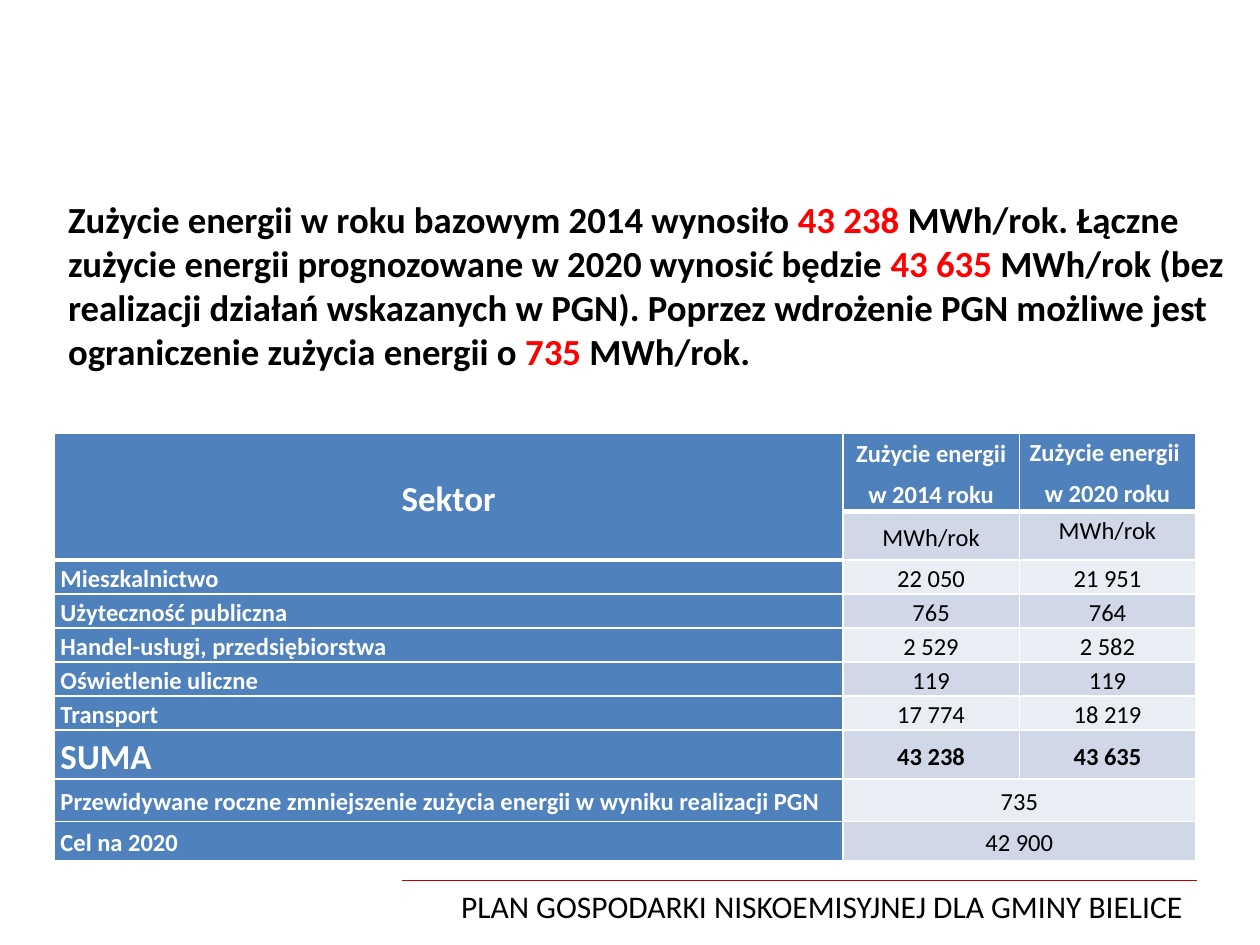
from lxml import etree
from pptx import Presentation
from pptx.dml.color import RGBColor
from pptx.enum import shapes, text
from pptx.oxml.ns import qn
from pptx.util import Inches, Pt

THEME = {
    "font": "Calibri",
    "black": "000000", "white": "FFFFFF", "accent": "FF0000", "rule": "C00000",
    "header": "4F81BD", "bands": ("D0D8E8", "E9EDF4"),
    "title": 21, "footer": 18, "large": 20, "body": 14,
}

TITLE = [
    ("Zużycie energii w roku bazowym 2014 wynosiło ", "black"),
    ("43 238 ", "accent"),
    ("MWh/rok. Łączne zużycie energii prognozowane w 2020 wynosić będzie ", "black"),
    ("43 635 ", "accent"),
    ("MWh/rok (bez realizacji działań wskazanych w PGN). Poprzez wdrożenie PGN "
     "możliwe jest ograniczenie zużycia energii o ", "black"),
    ("735 ", "accent"),
    ("MWh/rok.", "black"),
]
FOOTER = "PLAN GOSPODARKI NISKOEMISYJNEJ DLA GMINY BIELICE"

ROWS = [
    ("Sektor", "Zużycie energii\nw 2014 roku", "Zużycie energii \nw 2020 roku"),
    (None, "MWh/rok", "MWh/rok"),
    ("Mieszkalnictwo", "22 050", "21 951"),
    ("Użyteczność publiczna", "765", "764"),
    ("Handel-usługi, przedsiębiorstwa", "2 529", "2 582"),
    ("Oświetlenie uliczne", "119", "119"),
    ("Transport", "17 774", "18 219"),
    ("SUMA", "43 238", "43 635"),
    ("Przewidywane roczne zmniejszenie zużycia energii w wyniku realizacji PGN", "735", None),
    ("Cel na 2020", "42 900", None),
]
LARGE_LABELS = ("Sektor", "SUMA")
TOTAL_ROW = 7
COLUMN_WIDTHS = (6.26, 1.4, 1.4)
ROW_HEIGHTS = (0.62, 0.38, *[0.27] * 5, 0.39, 0.34, 0.31)
MERGES = [((0, 0), (1, 0)), ((8, 1), (8, 2)), ((9, 1), (9, 2))]
THICK_BOTTOM = {(0, 1), (0, 2), (1, 0)}


def rgb(name):
    return RGBColor.from_string(THEME.get(name, name))


def apply(target, **values):
    for name, value in values.items():
        setattr(target, name, value)


def add_span(para, words, size, color, bold=False):
    span = para.add_run()
    span.text = words
    apply(span.font, name=THEME["font"], size=Pt(THEME[size]), bold=bold)
    span.font.color.rgb = rgb(color)


def set_borders(cell, row, column):
    """White cell edges, thicker below the header cells."""
    weights = {
        "lnL": 1, "lnR": 1,
        "lnT": 3 if (row - 1, column) in THICK_BOTTOM else 1,
        "lnB": 3 if (row, column) in THICK_BOTTOM else 1,
    }
    properties = cell._tc.get_or_add_tcPr()
    for index, (tag, weight) in enumerate(weights.items()):
        line = etree.Element(qn(f"a:{tag}"), w=str(Pt(weight)))
        fill = etree.SubElement(line, qn("a:solidFill"))
        etree.SubElement(fill, qn("a:srgbClr"), val=THEME["white"])
        properties.insert(index, line)


def format_cell(cell, row, column, words):
    is_header = column == 0 or row == 0
    cell.fill.solid()
    cell.fill.fore_color.rgb = rgb("header" if is_header else THEME["bands"][(row + 1) % 2])
    set_borders(cell, row, column)
    at_top = column == 2 and row < 2
    apply(cell, margin_left=Inches(0.05), margin_right=Inches(0.05),
          margin_top=0, margin_bottom=0,
          vertical_anchor=text.MSO_ANCHOR.TOP if at_top else text.MSO_ANCHOR.MIDDLE)
    if words is None:
        return
    centred = column > 0 or row == 0
    for index, line in enumerate(words.split("\n")):
        frame = cell.text_frame
        para = frame.add_paragraph() if index else frame.paragraphs[0]
        apply(para, line_spacing=1.15, space_after=Pt(2),
              space_before=Pt(2 if index else 0),
              alignment=text.PP_ALIGN.CENTER if centred else text.PP_ALIGN.LEFT)
        add_span(para, line, "large" if words in LARGE_LABELS else "body",
                 "white" if is_header else "black", is_header or row == TOTAL_ROW)


def add_title(page):
    box = page.shapes.title
    apply(box, left=Inches(0.44), top=Inches(1.31), width=Inches(9.37), height=Inches(1.9))
    apply(box.text_frame, word_wrap=True, auto_size=text.MSO_AUTO_SIZE.NONE,
          vertical_anchor=text.MSO_ANCHOR.MIDDLE)
    para = box.text_frame.paragraphs[0]
    para.alignment = text.PP_ALIGN.LEFT
    for words, color in TITLE:
        add_span(para, words, "title", color, True)


def add_energy_table(page):
    frame = page.shapes.add_table(
        len(ROWS), len(COLUMN_WIDTHS), Inches(0.43), Inches(3.44),
        Inches(sum(COLUMN_WIDTHS)), Inches(sum(ROW_HEIGHTS)))
    table = frame.table
    for column, width in zip(table.columns, COLUMN_WIDTHS):
        column.width = Inches(width)
    for row, height in zip(table.rows, ROW_HEIGHTS):
        row.height = Inches(height)
    for start, end in MERGES:
        table.cell(*start).merge(table.cell(*end))
    for row, values in enumerate(ROWS):
        for column, words in enumerate(values):
            format_cell(table.cell(row, column), row, column, words)


def add_footer(page):
    rule = page.shapes.add_connector(
        shapes.MSO_CONNECTOR.STRAIGHT, Inches(3.19), Inches(6.99), Inches(9.5), Inches(6.99))
    rule.line.color.rgb = rgb("rule")
    rule.line.width = Pt(0.75)
    etree.SubElement(rule._element.spPr, qn("a:effectLst"))
    box = page.shapes.add_textbox(Inches(3.5), Inches(6.99), Inches(6.31), Inches(0.4))
    apply(box.text_frame, word_wrap=True, margin_left=Inches(0.16))
    add_span(box.text_frame.paragraphs[0], FOOTER, "footer", "black")


def main():
    deck = Presentation()
    apply(deck, slide_width=Inches(10), slide_height=Inches(7.5))
    page = deck.slides.add_slide(deck.slide_layouts[5])
    add_footer(page)
    add_title(page)
    add_energy_table(page)
    deck.save("out.pptx")


if __name__ == "__main__":
    main()
